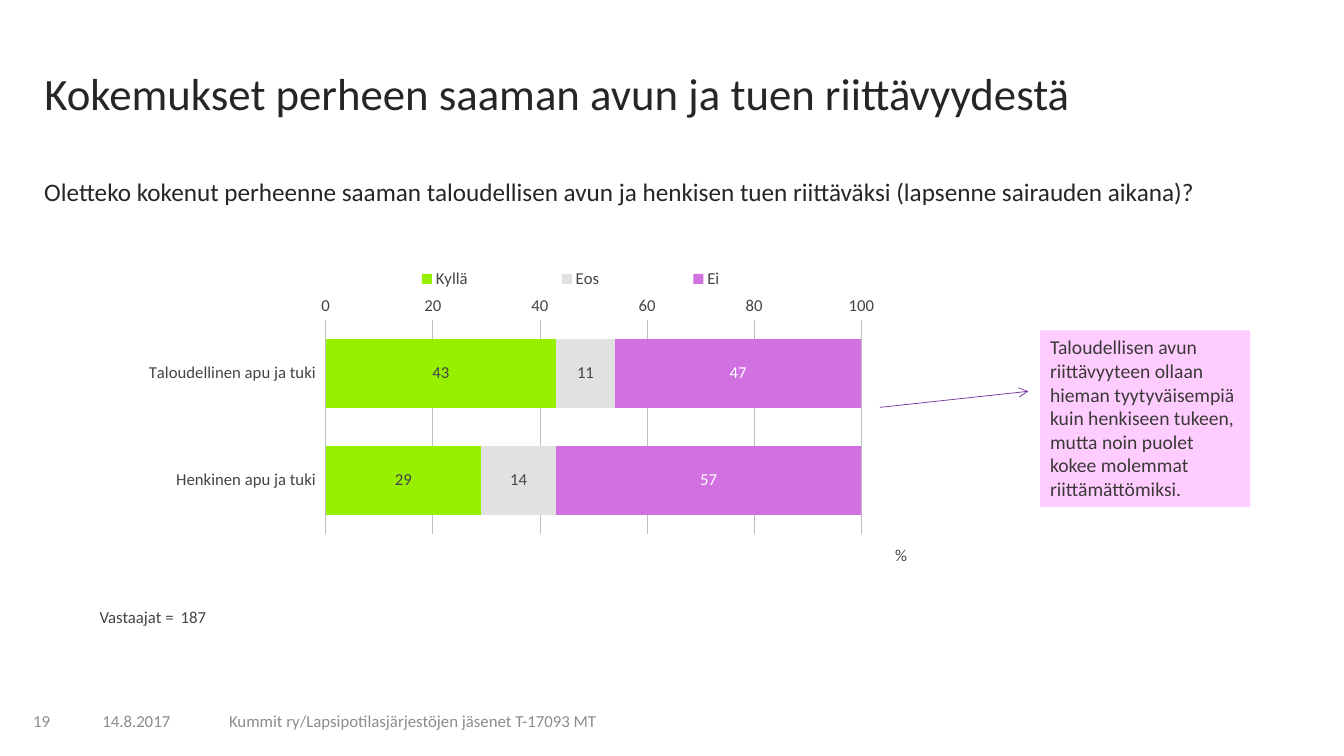
from pptx import Presentation
from pptx.chart.data import CategoryChartData
from pptx.dml.color import RGBColor
from pptx.enum.chart import (XL_AXIS_CROSSES, XL_CHART_TYPE, XL_LABEL_POSITION,
                             XL_LEGEND_POSITION, XL_TICK_LABEL_POSITION, XL_TICK_MARK)
from pptx.enum.shapes import MSO_CONNECTOR, MSO_SHAPE
from pptx.enum.text import MSO_ANCHOR, MSO_AUTO_SIZE, PP_ALIGN
from pptx.oxml.ns import qn
from pptx.util import Pt
from lxml.etree import SubElement

FONT = "Calibri"
DARK, GREY, MUTED = "262626", "444444", "8C8C8C"


def rgb(color):
    return RGBColor.from_string(color)


def style_font(font, size, color):
    font.name, font.size, font.bold = FONT, Pt(size), False
    font.color.rgb = rgb(color)


def write(shape, text, size, color, anchor=MSO_ANCHOR.TOP, spacing=1.0):
    frame = shape.text_frame
    frame.word_wrap = True
    frame.auto_size = MSO_AUTO_SIZE.NONE
    frame.vertical_anchor = anchor
    paragraph = frame.paragraphs[0]
    paragraph.alignment = PP_ALIGN.LEFT
    paragraph.line_spacing = spacing
    run = paragraph.add_run()
    run.text = text
    style_font(run.font, size, color)


def add_text(slide, box, text, size, color, **layout):
    write(slide.shapes.add_textbox(*map(Pt, box)), text, size, color, **layout)


def add_title(slide, box, text):
    title = slide.shapes.title
    title.left, title.top, title.width, title.height = map(Pt, box)
    write(title, text, 32, DARK, spacing=0.9)


def add_callout(slide, box, text):
    callout = slide.shapes.add_shape(MSO_SHAPE.RECTANGLE, *map(Pt, box))
    callout.shadow.inherit = False
    callout.fill.solid()
    callout.fill.fore_color.rgb = rgb("FFCCFF")
    callout.line.fill.background()
    write(callout, text, 14, "3B3838")
    callout.text_frame.auto_size = MSO_AUTO_SIZE.SHAPE_TO_FIT_TEXT


def add_arrow(slide, start, end):
    arrow = slide.shapes.add_connector(MSO_CONNECTOR.STRAIGHT, *map(Pt, start + end))
    arrow.line.color.rgb = rgb("7030A0")
    arrow.line.width = Pt(0.5)
    SubElement(arrow.line._get_or_add_ln(), qn("a:tailEnd"), type="arrow")
    SubElement(arrow._element.spPr, qn("a:effectLst"))


def place(part, index, **position):
    """Set a chart part's position as fractions of the chart area."""
    layout = part.find(qn("c:layout"))
    if layout is None:
        layout = part.makeelement(qn("c:layout"))
        part.insert(index, layout)
    manual = SubElement(layout, qn("c:manualLayout"))
    if "w" in position:
        SubElement(manual, qn("c:layoutTarget"), val="inner") if index == 0 else None
    for side in "xy":
        SubElement(manual, qn(f"c:{side}Mode"), val="edge")
    for key, fraction in position.items():
        SubElement(manual, qn(f"c:{key}"), val=str(fraction))


def style_axis(axis):
    axis.major_tick_mark = axis.minor_tick_mark = XL_TICK_MARK.NONE
    axis.format.line.fill.background()
    style_font(axis.tick_labels.font, 12, GREY)


def add_support_chart(slide, box, categories, answers):
    data = CategoryChartData(number_format="General")
    data.categories = categories
    for name, shares, _, _ in answers:
        data.add_series(name, shares)
    chart = slide.shapes.add_chart(XL_CHART_TYPE.BAR_STACKED, *map(Pt, box), data).chart
    style_font(chart.font, 12, "000000")
    chart.has_title = False

    # Bars and their values
    plot = chart.plots[0]
    plot.gap_width, plot.overlap, plot.vary_by_categories = 55, 100, False
    for series, (_, _, fill, label_color) in zip(plot.series, answers):
        series.format.fill.solid()
        series.format.fill.fore_color.rgb = rgb(fill)
        labels = series.data_labels
        labels.show_value = True
        labels.position = XL_LABEL_POSITION.CENTER
        labels.number_format, labels.number_format_is_linked = "#,##0", False
        style_font(labels.font, 12, label_color)

    # Axes
    topics, percent = chart.category_axis, chart.value_axis
    style_axis(topics)
    topics.reverse_order = True
    topics.crosses = XL_AXIS_CROSSES.MAXIMUM
    topics.tick_label_position = XL_TICK_LABEL_POSITION.LOW
    style_axis(percent)
    percent.minimum_scale, percent.maximum_scale, percent.major_unit = 0, 100.01, 20
    percent.tick_labels.number_format = "General"
    percent.tick_labels.number_format_is_linked = False
    percent.has_major_gridlines = True
    percent.major_gridlines.format.line.color.rgb = rgb("BCBEC0")
    percent.major_gridlines.format.line.width = Pt(0.5)
    unit = percent.axis_title.text_frame.paragraphs[0].add_run()
    unit.text = "%"
    style_font(unit.font, 12, GREY)

    # Legend
    chart.has_legend = True
    chart.legend.position = XL_LEGEND_POSITION.RIGHT
    chart.legend.include_in_layout = False
    style_font(chart.legend.font, 12, GREY)

    # Placement inside the chart area
    chart_xml = chart.element
    place(chart_xml.xpath(".//c:plotArea")[0], 0, x=0.24, y=0.27, w=0.7, h=0.63)
    place(chart_xml.xpath(".//c:legend")[0], 1, x=0.25, y=0.1, w=0.62, h=0.1)
    place(chart_xml.xpath(".//c:valAx/c:title")[0], 1, x=0.98, y=0.92)


def main():
    presentation = Presentation()
    presentation.slide_width, presentation.slide_height = Pt(960), Pt(540)
    slide = presentation.slides.add_slide(presentation.slide_layouts[5])

    # Heading and survey question
    add_title(slide, (24.5, 48, 869, 49),
              "Kokemukset perheen saaman avun ja tuen riittävyydestä")
    add_text(slide, (24.5, 125, 927, 49),
             "Oletteko kokenut perheenne saaman taloudellisen avun ja henkisen tuen "
             "riittäväksi (lapsenne sairauden aikana)?", 18, DARK, spacing=0.9)

    # Answers by topic
    add_support_chart(
        slide, (101.5, 162.7, 548.6, 244.8),
        ("Taloudellinen apu ja tuki", "Henkinen apu ja tuki"),
        (("Kyllä", (43, 29), "96F000", GREY),
         ("Eos", (11, 14), "E1E1E1", GREY),
         ("Ei", (47, 57), "D070E1", "FFFFFF")))

    # Conclusion
    add_callout(slide, (743, 236, 150, 126),
                "Taloudellisen avun riittävyyteen ollaan hieman tyytyväisempiä kuin "
                "henkiseen tukeen, mutta noin puolet kokee molemmat riittämättömiksi.")
    add_arrow(slide, (628.5, 291), (734.5, 279.5))

    # Number of respondents
    for left, text in ((64, "Vastaajat ="), (122, "187")):
        add_text(slide, (left, 431.3, 131, 20), text, 12, GREY, spacing=0.9)

    # Footer
    for left, width, text in ((16.5, 32, "19"), (66, 73, "14.8.2017"),
                              (156.5, 328, "Kummit ry/Lapsipotilasjärjestöjen jäsenet T-17093 MT")):
        add_text(slide, (left, 500.5, width, 29), text, 12, MUTED, anchor=MSO_ANCHOR.MIDDLE)

    presentation.save("out.pptx")


if __name__ == "__main__":
    main()
